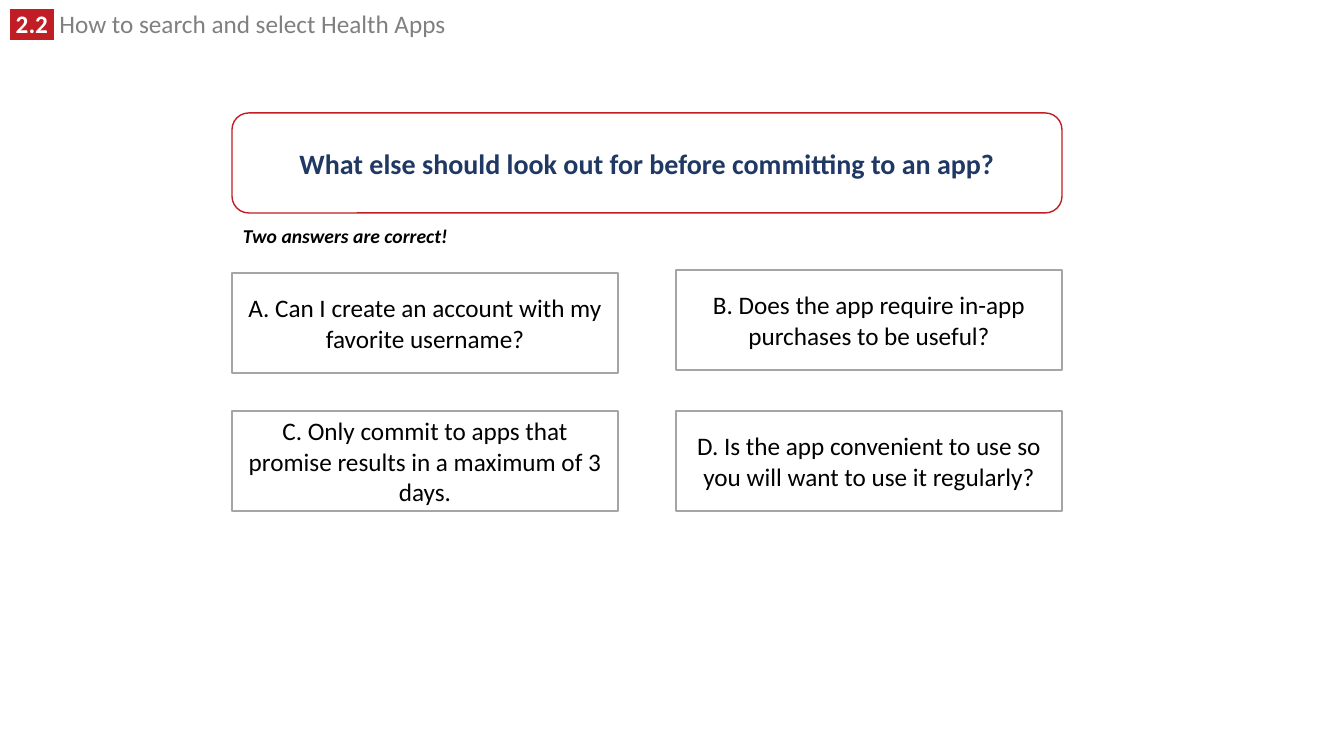
from dataclasses import dataclass

from lxml.etree import SubElement
from pptx import Presentation
from pptx.dml.color import RGBColor as RGB
from pptx.enum.shapes import MSO_SHAPE as Shape
from pptx.enum.text import MSO_ANCHOR as Anchor, MSO_AUTO_SIZE as Fit, PP_ALIGN as Align
from pptx.oxml.ns import qn
from pptx.util import Pt

PX = 914400 / 100.8


@dataclass(frozen=True)
class Theme:
    font: str = "Calibri"
    red: str = "C01E24"
    navy: str = "203864"
    gray: str = "808080"
    edge: str = "A5A5A5"
    black: str = "000000"
    white: str = "FFFFFF"
    head: int = 18
    ask: int = 20
    body: int = 18
    hint: int = 14


THEME = Theme()


def emu(*sizes):
    return [round(size * PX) for size in sizes]


def style(run, size, color, bold=False, italic=False):
    font = run.font
    font.size, font.bold, font.italic = Pt(size), bold, italic
    font.color.rgb = RGB.from_string(color)
    font.name = THEME.font


def mark(run, color):
    """Highlight a run; the element has to follow its fill."""
    props = run.font._element
    light = SubElement(props, qn("a:highlight"))
    SubElement(light, qn("a:srgbClr"), val=color)
    props.find(qn("a:solidFill")).addnext(light)


def card(slide, box, text, kind, edge, size, color, bold=False):
    shape = slide.shapes.add_shape(kind, *emu(*box))
    shape.shadow.inherit = False
    shape.fill.solid()
    shape.fill.fore_color.rgb = RGB.from_string(THEME.white)
    shape.line.color.rgb = RGB.from_string(edge)
    shape.line.width = Pt(1)
    frame = shape.text_frame
    frame.text = text
    frame.word_wrap = True
    frame.vertical_anchor = Anchor.MIDDLE
    para = frame.paragraphs[0]
    para.alignment = Align.CENTER
    style(para.runs[0], size, color, bold)


# Section number and title
def header(slide, box, number, text):
    title = slide.shapes.title
    title.left, title.top, title.width, title.height = emu(*box)
    frame = title.text_frame
    frame.auto_size = Fit.NONE
    frame.word_wrap = True
    frame.vertical_anchor = Anchor.TOP
    para = frame.paragraphs[0]
    para.text = f" {number} "
    para.alignment = Align.LEFT
    para.line_spacing = 0.8
    rest = para.add_run()
    rest.text = f" {text}"
    style(para.runs[0], THEME.head, THEME.white, bold=True)
    mark(para.runs[0], THEME.red)
    style(rest, THEME.head, THEME.gray)


# Question with the hint below it
def question(slide, box, text, hint):
    left, top, width, height = box
    card(slide, box, text, Shape.ROUNDED_RECTANGLE, THEME.red,
         THEME.ask, THEME.navy, bold=True)
    note = slide.shapes.add_textbox(*emu(left + 1, top + height + 6, 226, 34))
    frame = note.text_frame
    frame.text = hint
    frame.word_wrap = False
    style(frame.paragraphs[0].runs[0], THEME.hint, THEME.black, True, True)


# Two by two grid of answers, each with its own vertical nudge
def answers(slide, box, items):
    left, top, width, height = box
    wide, high = 386, 100
    for i, (text, nudge) in enumerate(items):
        row, col = divmod(i, 2)
        place = (left + col * (width - wide),
                 top + row * (height - high) + nudge, wide, high)
        card(slide, place, text, Shape.RECTANGLE, THEME.edge,
             THEME.body, THEME.black)


def main():
    deck = Presentation()
    deck.slide_width, deck.slide_height = emu(1344, 756)
    slide = deck.slides.add_slide(deck.slide_layouts.get_by_name("Title Only"))
    header(slide, (0, 9, 960, 35), "2.2", "How to search and select Health Apps")
    question(slide, (232, 113, 830, 100),
             "What else should look out for before committing to an app?",
             "Two answers are correct!")
    answers(slide, (232, 270, 830, 241), [
        ("A. Can I create an account with my favorite username?", 3),
        ("B. Does the app require in-app purchases to be useful?", 0),
        ("C. Only commit to apps that promise results in a maximum of 3 days.", 0),
        ("D. Is the app convenient to use so you will want to use it regularly?", 0),
    ])
    deck.save("out.pptx")


if __name__ == "__main__":
    main()
